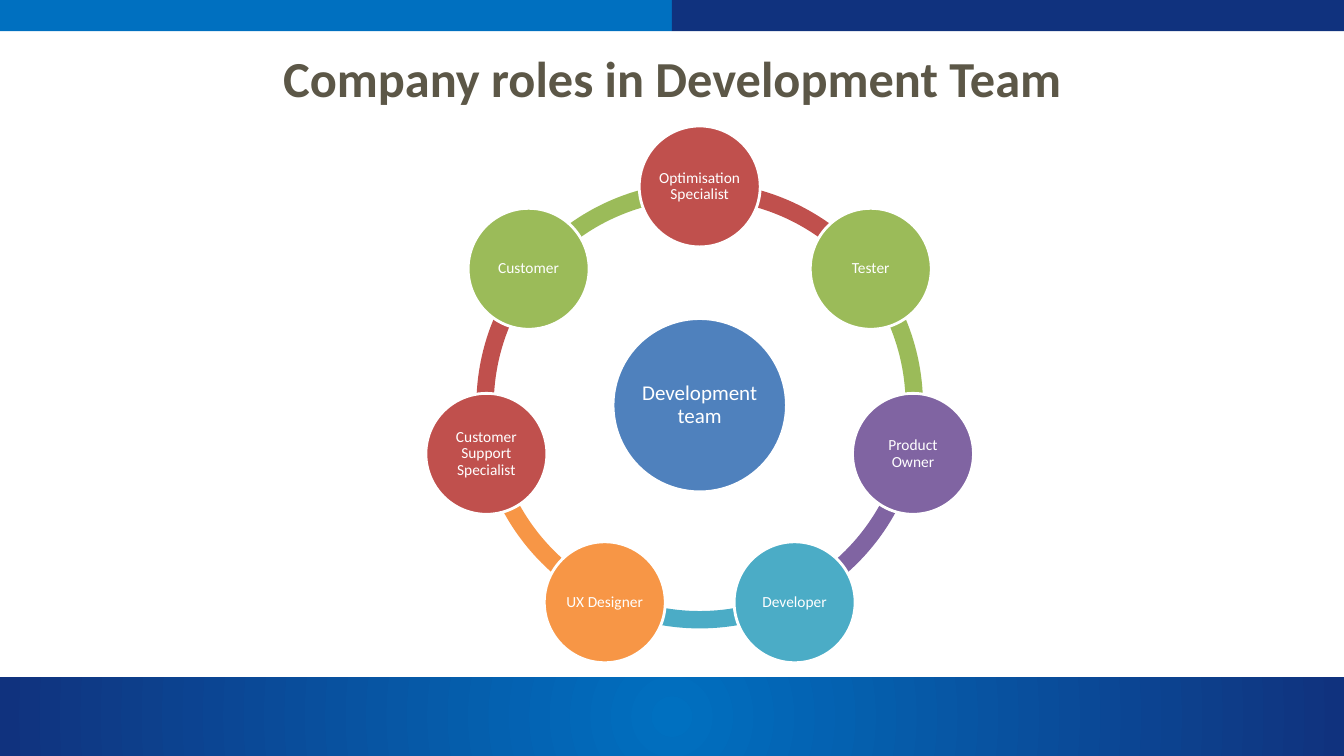
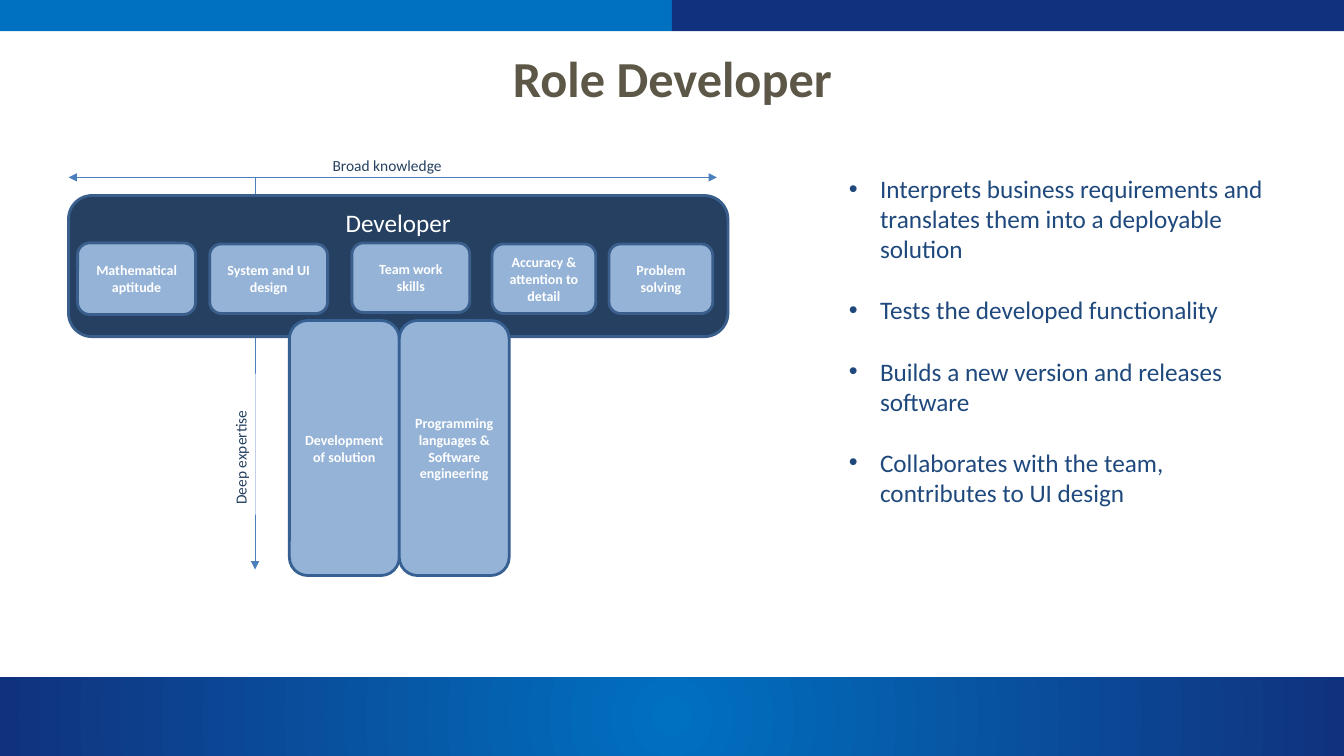
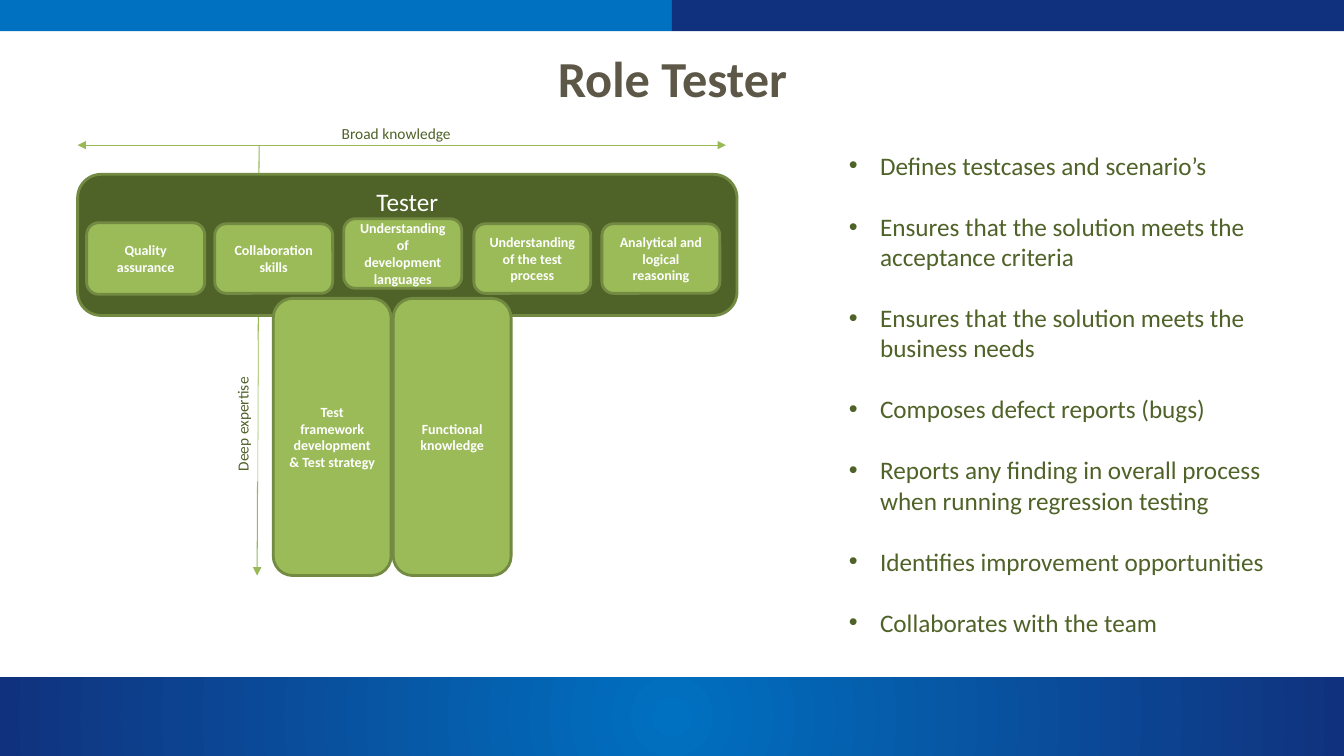
import math
from lxml import etree
from pptx import Presentation
from pptx.dml.color import RGBColor
from pptx.enum import shapes, text
from pptx.oxml import ns
from pptx.util import Inches, Pt

FONT = "Calibri"
SLIDE_W, SLIDE_H = 13.33, 7.5
COLORS = {
    "white": "FFFFFF", "title": "5C5747", "sky": "0070C0", "navy": "10327E",
    "blue": "4F81BD", "red": "C0504D", "green": "9BBB59", "purple": "8064A2",
    "aqua": "4BACC6", "orange": "F79646",
    "dark_blue": "254061", "pale_blue": "95B3D7", "blue_edge": "3A5F8C",
    "pillar_edge": "376092", "blue_arrow": "4B7EBC", "blue_text": "1F497D",
    "dark_green": "4F6228", "green_edge": "738A42", "green_arrow": "98B955",
}

TEAM_TITLE = "Company roles in Development Team"
TEAM_HUB = "Development team"
TEAM_ROLES = [
    ("Optimisation Specialist", "red"),
    ("Tester", "green"),
    ("Product Owner", "purple"),
    ("Developer", "aqua"),
    ("UX Designer", "orange"),
    ("Customer Support Specialist", "red"),
    ("Customer", "green"),
]

ROLES = [
    {
        "title": "Role Developer", "name": "Developer",
        "bar": (0.68, 1.94), "broad_y": 1.76,
        "deep": ((2.53, 1.76), (2.53, 5.65)), "deep_label": (1.69, 4.26),
        "skills": [
            ("Mathematical aptitude", 0.77, 2.41, 1.17, 0.71),
            ("System and UI design", 2.08, 2.42, 1.17, 0.69),
            ("Team work skills", 3.49, 2.41, 1.17, 0.69),
            ("Accuracy & attention to detail", 4.88, 2.42, 1.03, 0.69),
            ("Problem solving", 6.04, 2.42, 1.03, 0.69),
        ],
        "pillars": ["Development of solution",
                    "Programming languages & Software engineering"],
        "pillar_box": (2.87, 3.18, 1.09, 2.53), "pillar_step": 1.09,
        "tasks_box": (8.32, 1.67, 4.35, 3.43),
        "tasks": [
            "Interprets business requirements and translates them into a deployable solution",
            "Tests the developed functionality",
            "Builds a new version and releases software",
            "Collaborates with the team, contributes to UI design",
        ],
        "dark": "dark_blue", "card": "pale_blue", "edge": "blue_edge",
        "pillar_edge": "pillar_edge", "arrow": "blue_arrow", "task_color": "blue_text",
    },
    {
        "title": "Role Tester", "name": "Tester",
        "bar": (0.77, 1.73), "broad_y": 1.44,
        "deep": ((2.57, 1.44), (2.55, 5.71)), "deep_label": (1.71, 3.93),
        "skills": [
            ("Quality assurance", 0.86, 2.21, 1.17, 0.71),
            ("Collaboration skills", 2.13, 2.22, 1.17, 0.69),
            ("Understanding of development languages", 3.41, 2.17, 1.17, 0.69),
            ("Understanding of the test process", 4.7, 2.22, 1.16, 0.69),
            ("Analytical and logical reasoning", 5.97, 2.22, 1.17, 0.69),
        ],
        "pillars": ["Test framework development & Test strategy",
                    "Functional knowledge"],
        "pillar_box": (2.71, 2.96, 1.17, 2.75), "pillar_step": 1.19,
        "tasks_box": (8.32, 1.44, 4.35, 4.95),
        "tasks": [
            "Defines testcases and scenario’s",
            "Ensures that the solution meets the acceptance criteria",
            "Ensures that the solution meets the business needs",
            "Composes defect reports (bugs)",
            "Reports any finding in overall process when running regression testing",
            "Identifies improvement opportunities",
            "Collaborates with the team",
        ],
        "dark": "dark_green", "card": "green", "edge": "green_edge",
        "pillar_edge": "green_edge", "arrow": "green_arrow", "task_color": "dark_green",
    },
]


def rgb(name):
    return RGBColor.from_string(COLORS[name])


def style(paragraph, size, color, bold=False, align=text.PP_ALIGN.LEFT):
    paragraph.alignment = align
    font = paragraph.font
    font.name, font.size, font.bold = FONT, Pt(size), bold
    font.color.rgb = rgb(color)


def add_shape(slide, kind, box, fill, edge=None):
    shape = slide.shapes.add_shape(kind, *map(Inches, box))
    shape.shadow.inherit = False
    shape.fill.solid()
    shape.fill.fore_color.rgb = rgb(fill)
    if edge:
        shape.line.color.rgb = rgb(edge)
        shape.line.width = Pt(2)
    else:
        shape.line.fill.background()
    return shape


def write(shape, words, size, color, bold=False, align=text.PP_ALIGN.CENTER,
          anchor=text.MSO_ANCHOR.MIDDLE, wrap=True):
    frame = shape.text_frame
    frame.text = words
    frame.word_wrap = wrap
    frame.vertical_anchor = anchor
    style(frame.paragraphs[0], size, color, bold, align)
    return frame


def add_text(slide, box, words, size, color, **options):
    return write(slide.shapes.add_textbox(*map(Inches, box)), words, size, color, **options)


def add_arrow(slide, start, end, color, ends):
    arrow = slide.shapes.add_connector(
        shapes.MSO_CONNECTOR.STRAIGHT, *map(Inches, (*start, *end)))
    arrow.line.color.rgb = rgb(color)
    arrow.line.width = Pt(0.75)
    line = arrow.line._get_or_add_ln()
    for tag in ends:
        etree.SubElement(line, ns.qn(tag)).set("type", "triangle")
    etree.SubElement(arrow._element.spPr, ns.qn("a:effectLst"))


def add_frame(prs, title):
    slide = prs.slides.add_slide(prs.slide_layouts[6])
    rect = shapes.MSO_SHAPE.RECTANGLE
    footer = add_shape(slide, rect, (0, 6.72, SLIDE_W, 0.78), "navy")
    footer.fill.gradient()
    for stop, color, position in zip(footer.fill.gradient_stops, ("sky", "navy"), (0, 1)):
        stop.color.rgb = rgb(color)
        stop.position = position
    gradient = footer._element.spPr.find(ns.qn("a:gradFill"))
    gradient.remove(gradient.find(ns.qn("a:lin")))
    radial = etree.SubElement(gradient, ns.qn("a:path"))
    radial.set("path", "circle")
    focus = etree.SubElement(radial, ns.qn("a:fillToRect"))
    for side in "ltrb":
        focus.set(side, "50000")
    half = SLIDE_W / 2
    for i, color in enumerate(("sky", "navy")):
        add_shape(slide, rect, (i * half, 0, half, 0.31), color)
    add_text(slide, (0.67, 0.3, 12, 0.93), title, 36, "title", bold=True)
    return slide


def add_circle(slide, center, diameter, words, size, color):
    x, y = center
    box = (x - diameter / 2, y - diameter / 2, diameter, diameter)
    circle = add_shape(slide, shapes.MSO_SHAPE.OVAL, box, color, "white")
    frame = write(circle, words, size, "white")
    frame.margin_left = frame.margin_right = Inches(0.02)
    frame.margin_top = frame.margin_bottom = Inches(0.02)
    frame.paragraphs[0].line_spacing = 0.9


def build_team(prs):
    slide = add_frame(prs, TEAM_TITLE)
    center_x, center_y = 6.94, 4.02
    ring, orbit = 4.43, 2.17
    step = 360 / len(TEAM_ROLES)
    angles = [(270 + i * step) % 360 for i in range(len(TEAM_ROLES))]
    ring_box = (center_x - ring / 2, center_y - ring / 2, ring, ring)
    for (role, color), angle in reversed(list(zip(TEAM_ROLES, angles))):
        arc = add_shape(slide, shapes.MSO_SHAPE.BLOCK_ARC, ring_box, color)
        arc.adjustments[0] = angle * 0.6
        arc.adjustments[1] = (angle + step) % 360 * 0.6
        arc.adjustments[2] = 0.039
    add_circle(slide, (center_x, center_y), 1.72, TEAM_HUB, 15, "blue")
    for (role, color), angle in zip(TEAM_ROLES, angles):
        turn = math.radians(angle)
        center = (center_x + orbit * math.cos(turn), center_y + orbit * math.sin(turn))
        add_circle(slide, center, 1.2, role, 11, color)


def add_tasks(slide, role):
    box = slide.shapes.add_textbox(*map(Inches, role["tasks_box"]))
    frame = box.text_frame
    frame.word_wrap = True
    frame.text = "\n".join(role["tasks"])
    for i, task in enumerate(frame.paragraphs):
        if i:
            task.space_before = Pt(22)
        props = task._p.get_or_add_pPr()
        props.set("marL", str(Inches(0.31)))
        props.set("indent", str(-Inches(0.31)))
        etree.SubElement(props, ns.qn("a:buFont")).set("typeface", "Arial")
        etree.SubElement(props, ns.qn("a:buChar")).set("char", "•")
        style(task, 18, role["task_color"])


def build_role(prs, role):
    slide = add_frame(prs, role["title"])
    rounded = shapes.MSO_SHAPE.ROUNDED_RECTANGLE
    dark, card = role["dark"], role["card"]
    top = text.MSO_ANCHOR.TOP
    left = text.PP_ALIGN.LEFT
    bar_x, bar_y = role["bar"]
    broad_y = role["broad_y"]

    add_arrow(slide, *role["deep"], role["arrow"], ["a:tailEnd"])
    deep_label = add_shape(slide, shapes.MSO_SHAPE.RECTANGLE,
                           (*role["deep_label"], 1.4, 0.29), "white")
    deep_label.rotation = 270
    write(deep_label, "Deep expertise", 11, dark, align=left, anchor=top)

    bar = add_shape(slide, rounded, (bar_x, bar_y, 6.54, 1.4), dark, role["edge"])
    write(bar, role["name"], 18, "white", anchor=top)
    add_tasks(slide, role)

    x, y, width, height = role["pillar_box"]
    for i, pillar in enumerate(role["pillars"]):
        box = (x + i * role["pillar_step"], y, width, height)
        write(add_shape(slide, rounded, box, card, role["pillar_edge"]),
              pillar, 10, "white", bold=True)
    for skill, *box in role["skills"]:
        write(add_shape(slide, rounded, box, card, role["edge"]),
              skill, 10, "white", bold=True)

    add_arrow(slide, (bar_x, broad_y), (bar_x + 6.43, broad_y), role["arrow"],
              ["a:headEnd", "a:tailEnd"])
    add_text(slide, (bar_x + 2.52, broad_y - 0.26, 1.29, 0.29), "Broad knowledge",
             11, dark, align=left, anchor=top, wrap=False)


def main():
    prs = Presentation()
    prs.slide_width, prs.slide_height = Inches(SLIDE_W), Inches(SLIDE_H)
    build_team(prs)
    for role in ROLES:
        build_role(prs, role)
    prs.save("out.pptx")


if __name__ == "__main__":
    main()
